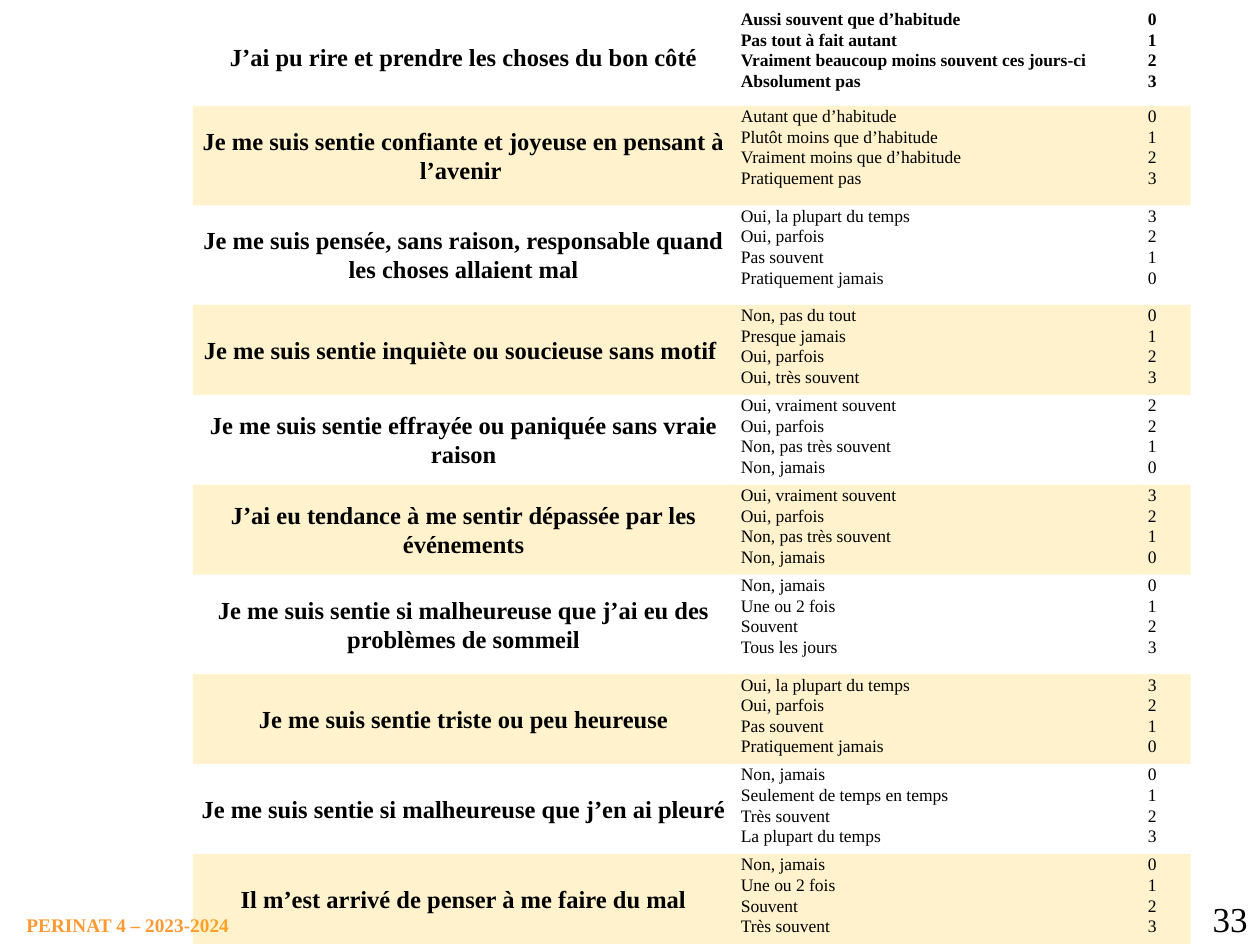
import pptx
import pptx.dml.color
import pptx.enum.text
import pptx.oxml.ns
import pptx.util
from lxml import etree

Inches, Pt = pptx.util.Inches, pptx.util.Pt
RGBColor = pptx.dml.color.RGBColor
PP_ALIGN = pptx.enum.text.PP_ALIGN
MSO_ANCHOR = pptx.enum.text.MSO_ANCHOR
qn = pptx.oxml.ns.qn

BLACK = RGBColor(0x00, 0x00, 0x00)
AMBER = RGBColor(0xFF, 0xC0, 0x00)
ORANGE = RGBColor(0xFF, 0x99, 0x33)
FONT = "Times New Roman"
NO_STYLE_NO_GRID = "{2D5ABB26-0587-4C30-8999-92F81FD0307C}"
BAND_ALPHA = 20  # percent

# Content: question, answers, scores, row height
SHORT, TALL = 0.71, 0.79
ITEMS = [
    ("J’ai pu rire et prendre les choses du bon côté",
     ["Aussi souvent que d’habitude", "Pas tout à fait autant",
      "Vraiment beaucoup moins souvent ces jours-ci", "Absolument pas"], "0123", 0.77),
    ("Je me suis sentie confiante et joyeuse en pensant à l’avenir ",
     ["Autant que d’habitude", "Plutôt moins que d’habitude",
      "Vraiment moins que d’habitude", "Pratiquement pas"], "0123", TALL),
    ("Je me suis pensée, sans raison, responsable quand les choses allaient mal",
     ["Oui, la plupart du temps", "Oui, parfois", "Pas souvent",
      "Pratiquement jamais"], "3210", TALL),
    ("Je me suis sentie inquiète ou soucieuse sans motif ",
     ["Non, pas du tout", "Presque jamais", "Oui, parfois",
      "Oui, très souvent"], "0123", SHORT),
    ("Je me suis sentie effrayée ou paniquée sans vraie raison",
     ["Oui, vraiment souvent", "Oui, parfois", "Non, pas très souvent",
      "Non, jamais"], "2210", SHORT),
    ("J’ai eu tendance à me sentir dépassée par les événements",
     ["Oui, vraiment souvent", "Oui, parfois", "Non, pas très souvent",
      "Non, jamais"], "3210", SHORT),
    ("Je me suis sentie si malheureuse que j’ai eu des problèmes de sommeil",
     ["Non, jamais", "Une ou 2 fois", "Souvent", "Tous les jours"], "0123", TALL),
    ("Je me suis sentie triste ou peu heureuse",
     ["Oui, la plupart du temps", "Oui, parfois", "Pas souvent",
      "Pratiquement jamais"], "3210", SHORT),
    ("Je me suis sentie si malheureuse que j’en ai pleuré",
     ["Non, jamais", "Seulement de temps en temps", "Très souvent",
      "La plupart du temps"], "0123", SHORT),
    ("Il m’est arrivé de penser à me faire du mal",
     ["Non, jamais", "Une ou 2 fois", "Souvent", "Très souvent"], "0123", SHORT),
]
COLUMNS = [4.3, 3.23, 0.39]
TABLE_LEFT, TABLE_TOP = 1.53, 0.07


def write(tf, lines, size, bold=False, color=BLACK, align=PP_ALIGN.LEFT, spacing=None):
    for i, line in enumerate(lines):
        p = tf.paragraphs[0] if i == 0 else tf.add_paragraph()
        p.text = line
        p.alignment = align
        p.line_spacing = spacing
        p.font.name, p.font.size, p.font.bold = FONT, Pt(size), bold
        p.font.color.rgb = color


def add_text(s, box, text, wrap, margin=None, **style):
    tf = s.shapes.add_textbox(*map(Inches, box)).text_frame
    tf.word_wrap = wrap
    if margin is not None:
        tf.margin_left = tf.margin_right = tf.margin_top = tf.margin_bottom = margin
    write(tf, [text], **style)


def fill_cell(cell, lines, banded, **style):
    cell.margin_left = cell.margin_right = Inches(0.05)
    cell.margin_top = cell.margin_bottom = 0
    write(cell.text_frame, lines, spacing=1.07, **style)
    if banded:
        cell.fill.solid()
        cell.fill.fore_color.rgb = AMBER
        color = next(cell._tc.iter(qn("a:tcPr"))).find(".//" + qn("a:srgbClr"))
        etree.SubElement(color, qn("a:alpha"), val=str(BAND_ALPHA * 1000))
    else:
        cell.fill.background()


prs = pptx.Presentation()
prs.slide_width, prs.slide_height = Inches(10), Inches(7.5)
s = prs.slides.add_slide(prs.slide_layouts[6])

# Footer and page number, behind the table
add_text(s, (0.21, 7.25, 1.64, 0.19), "PERINAT 4 – 2023-2024", False, margin=0,
         size=11, bold=True, color=ORANGE)
add_text(s, (9.17, 7.07, 0.83, 0.43), "33", True, size=20, align=PP_ALIGN.RIGHT)

# Questionnaire table
heights = [item[3] for item in ITEMS]
table = s.shapes.add_table(
    len(ITEMS), len(COLUMNS), Inches(TABLE_LEFT), Inches(TABLE_TOP),
    Inches(sum(COLUMNS)), Inches(sum(heights))).table
table.first_row = table.horz_banding = False
table._tbl.tblPr.find(qn("a:tableStyleId")).text = NO_STYLE_NO_GRID
for column, width in zip(table.columns, COLUMNS):
    column.width = Inches(width)

for i, (question, answers, scores, height) in enumerate(ITEMS):
    table.rows[i].height = Inches(height)
    banded = i % 2 == 1
    cell = table.cell(i, 0)
    cell.vertical_anchor = MSO_ANCHOR.MIDDLE
    fill_cell(cell, [question], banded, size=14, bold=True, align=PP_ALIGN.CENTER)
    for col, lines in enumerate((answers, scores), start=1):
        fill_cell(table.cell(i, col), lines, banded, size=10, bold=i == 0)

prs.save("out.pptx")
